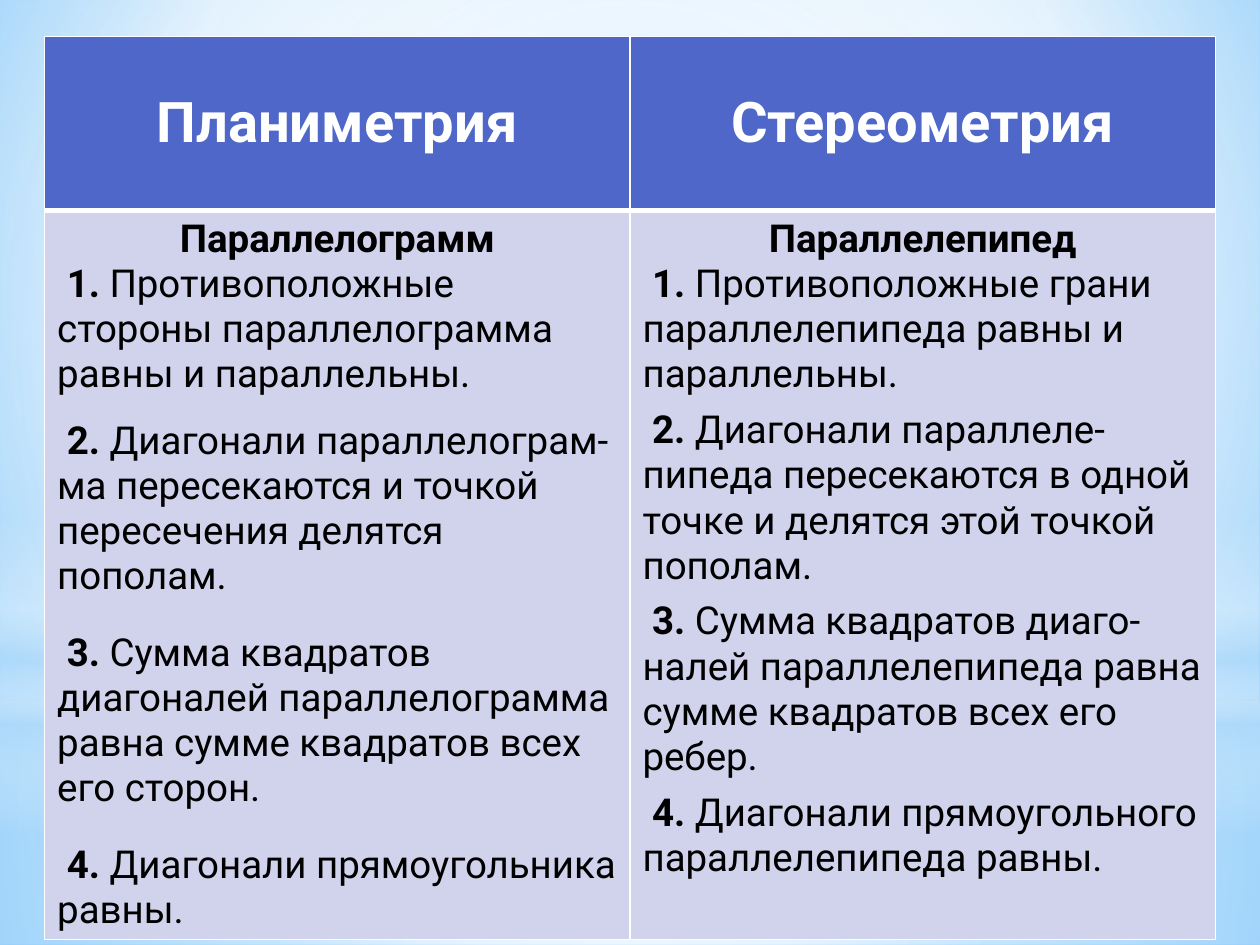
import pptx
import pptx.util
import pptx.dml.color
import pptx.enum.shapes
import pptx.enum.text
import pptx.oxml
import pptx.oxml.ns
from pptx.util import Cm

FONT = "Roboto"
WHITE, BLACK = "FFFFFF", "000000"
HEADER_FILL, BODY_FILL = "4E67C8", "D0D3EB"
PALE_BLUE = "B4DCFA"
CENTER = (50, 50, 50, 50)
NAMESPACE = pptx.oxml.ns.nsdecls("a")

HEADINGS = ["Планиметрия", "Стереометрия"]
# Subject of each column, then its properties with the space after each
COLUMNS = [
    ("Параллелограмм", [
        ("Противоположные стороны параллелограмма равны и параллельны.", 12),
        ("Диагонали параллелограм-ма пересекаются и точкой пересечения делятся пополам.", 18),
        ("Сумма квадратов диагоналей параллелограмма равна сумме квадратов всех его сторон.", 18),
        ("Диагонали прямоугольника равны.", 6),
    ]),
    ("Параллелепипед", [
        ("Противоположные грани параллелепипеда равны и параллельны.", 6),
        ("Диагонали параллеле-пипеда пересекаются в одной точке и делятся этой точкой пополам.", 6),
        ("Сумма квадратов диаго-налей параллелепипеда равна сумме квадратов всех его ребер.", 6),
        ("Диагонали прямоугольного параллелепипеда равны.", 6),
    ]),
]


def color(value):
    return pptx.dml.color.RGBColor.from_string(value)


def set_gradient(fill, owner, stops, focus=None, angle=0):
    """Gradient of (position, colour, opacity); a focus makes it circular."""
    marks = "".join(
        f'<a:gs pos="{position * 1000}"><a:srgbClr val="{value}">'
        f'<a:alpha val="{opacity * 1000}"/></a:srgbClr></a:gs>'
        for position, value, opacity in stops)
    if focus:
        sides = " ".join(f'{side}="{inset * 1000}"' for side, inset in zip("ltrb", focus))
        direction = f'<a:path path="circle"><a:fillToRect {sides}/></a:path>'
    else:
        direction = f'<a:lin ang="{angle * 60000}" scaled="0"/>'
    fill.solid()
    solid = owner.find(pptx.oxml.ns.qn("a:solidFill"))
    owner.replace(solid, pptx.oxml.parse_xml(
        f'<a:gradFill {NAMESPACE} rotWithShape="1"><a:gsLst>{marks}</a:gsLst>{direction}</a:gradFill>'))


def add_glow(page, kind, top, height, stops, focus=None, angle=0):
    shape = page.shapes.add_shape(kind, 0, Cm(top), Cm(25.4), Cm(height))
    shape.shadow.inherit = False
    shape.line.fill.background()
    set_gradient(shape.fill, shape._element.spPr, stops, focus, angle)


def add_backdrop(page):
    background = page.background.fill
    background.solid()
    owner = page._element.find(".//" + pptx.oxml.ns.qn("p:bgPr"))
    set_gradient(background, owner,
                 [(0, "9ED5FF", 100), (60, WHITE, 100), (100, "5BB9FF", 100)], (20, 10, 20, 60))
    kinds = pptx.enum.shapes.MSO_SHAPE
    add_glow(page, kinds.RECTANGLE, 14.17, 4.88,
             [(0, WHITE, 91), (37, WHITE, 76), (100, PALE_BLUE, 79)], CENTER)
    add_glow(page, kinds.RECTANGLE, 0, 14.17,
             [(0, WHITE, 89), (48, WHITE, 62), (100, PALE_BLUE, 79)], CENTER)
    add_glow(page, kinds.RECTANGLE, 10.46, 6.35,
             [(0, WHITE, 0), (29, WHITE, 30), (45, PALE_BLUE, 40), (55, WHITE, 26),
              (65, PALE_BLUE, 60), (100, WHITE, 0)], angle=90)
    add_glow(page, kinds.OVAL, 4.45, 14.17, [(0, WHITE, 100), (56, WHITE, 0)], CENTER)


def add_span(para, text, size, value, bold):
    span = para.add_run()
    span.text = text
    span.font.name = FONT
    span.font.size = pptx.util.Pt(size)
    span.font.bold = bold
    span.font.color.rgb = color(value)


def format_cell(cell, fill, top, bottom):
    cell.fill.solid()
    cell.fill.fore_color.rgb = color(fill)
    properties = cell._tc.get_or_add_tcPr()
    for index, (side, width) in enumerate(zip("LRTB", (1, 1, top, bottom))):
        properties.insert(index, pptx.oxml.parse_xml(
            f'<a:ln{side} {NAMESPACE} w="{pptx.util.Pt(width)}"><a:solidFill>'
            f'<a:srgbClr val="{WHITE}"/></a:solidFill></a:ln{side}>'))


def fill_header(cell, heading):
    format_cell(cell, HEADER_FILL, 1, 3)
    cell.vertical_anchor = pptx.enum.text.MSO_ANCHOR.MIDDLE
    para = cell.text_frame.paragraphs[0]
    para.alignment = pptx.enum.text.PP_ALIGN.CENTER
    add_span(para, heading, 32, WHITE, True)


def fill_body(cell, subject, properties):
    format_cell(cell, BODY_FILL, 3, 1)
    para = cell.text_frame.paragraphs[0]
    para.alignment = pptx.enum.text.PP_ALIGN.CENTER
    add_span(para, subject, 22, BLACK, True)
    for number, (text, space) in enumerate(properties, 1):
        para = cell.text_frame.add_paragraph()
        para.space_after = pptx.util.Pt(space)
        add_span(para, f" {number}.", 22, BLACK, True)
        add_span(para, " " + text, 22, BLACK, False)


def add_comparison(page):
    frame = page.shapes.add_table(2, len(COLUMNS), Cm(0.9), Cm(0.74), Cm(23.6), Cm(17.02))
    table = frame.table
    table.horz_banding = False
    table.rows[0].height, table.rows[1].height = Cm(3.5), Cm(13.52)
    for index, (heading, (subject, properties)) in enumerate(zip(HEADINGS, COLUMNS)):
        fill_header(table.cell(0, index), heading)
        fill_body(table.cell(1, index), subject, properties)


def main():
    deck = pptx.Presentation()
    deck.slide_width, deck.slide_height = Cm(25.4), Cm(19.05)
    page = deck.slides.add_slide(deck.slide_layouts[6])
    add_backdrop(page)
    add_comparison(page)
    deck.save("out.pptx")


if __name__ == "__main__":
    main()
